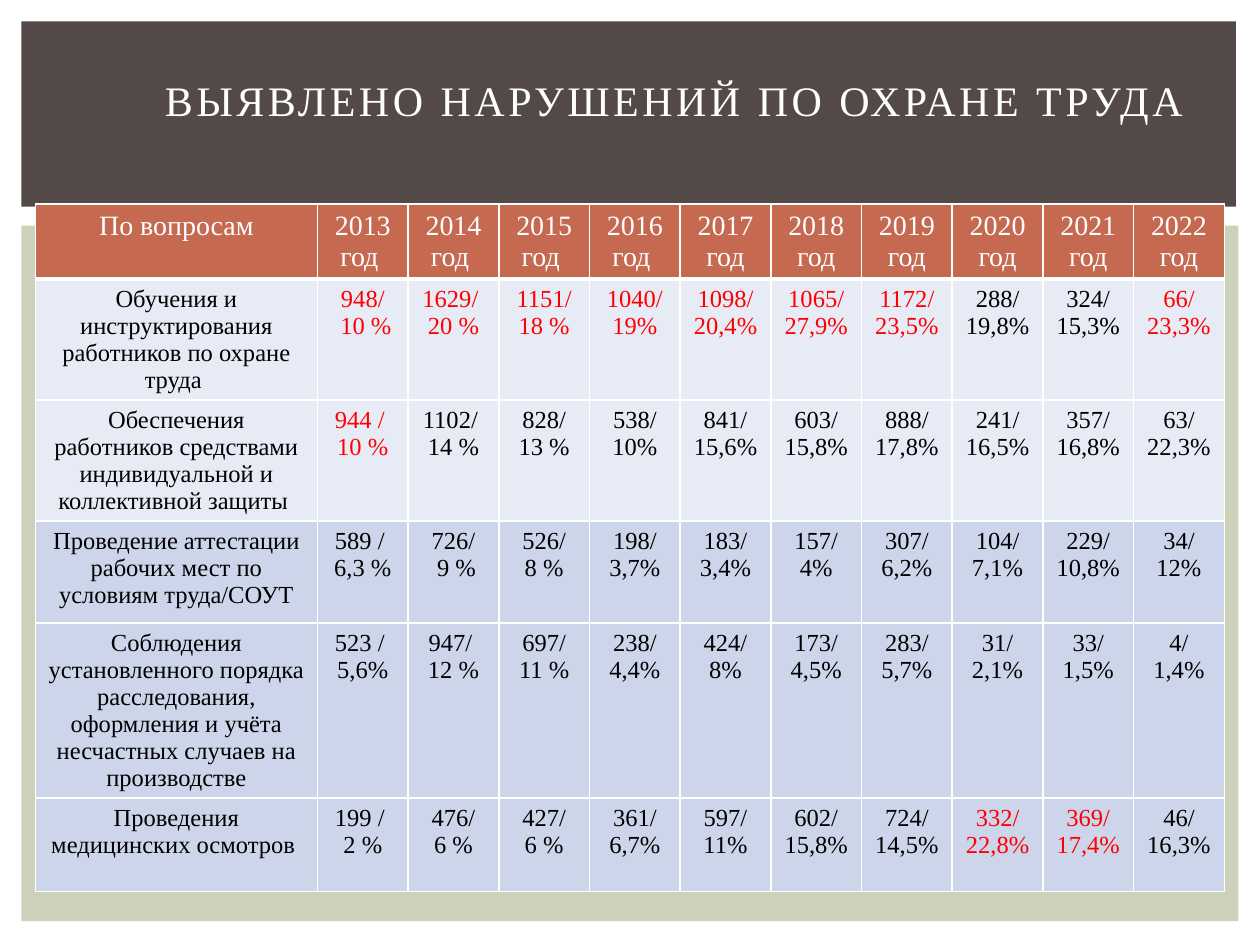
from lxml import etree
from pptx import Presentation
from pptx import util as u
from pptx.dml import color
from pptx.enum import shapes, text
from pptx.oxml import ns

COLORS = {
    "band": "534949", "panel": "CCD1B9", "header": "C66951", "white": "FFFFFF",
    "light": "E7EBF5", "blue": "CCD5EA", "black": "000000", "red": "FF0000",
}
FONT = "Times New Roman"
TITLE = "ВЫЯВЛЕНО НАРУШЕНИЙ ПО ОХРАНЕ ТРУДА"
HEADER = (
    ["По вопросам"]
    + [f"{year} год " for year in range(2013, 2017)]
    + [f"{year} год" for year in range(2017, 2020)]
    + [f"{year}\nгод" for year in range(2020, 2023)]
)
ROWS = [
    ["Обучения и инструктирования работников по охране труда ",
     "948/\n 10 %", "1629/ \n20 %", "1151/\n18 %", "1040/\n19%", "1098/\n20,4%",
     "1065/\n27,9%", "1172/\n23,5%", "288/\n19,8%", "324/\n15,3%", "66/\n23,3%"],
    ["Обеспечения работников средствами индивидуальной и коллективной защиты ",
     "944 / \n10 %", "1102/ \n14 %", "828/\n13 %", "538/\n10%", "841/\n15,6%",
     "603/\n15,8%", "888/\n17,8%", "241/\n16,5%", "357/\n16,8%", "63/\n22,3%"],
    ["Проведение аттестации рабочих мест по условиям труда/СОУТ",
     "589 / \n6,3 %", "726/\n 9 %", "526/\n8 %", "198/\n3,7%", "183/\n3,4%",
     "157/\n4%", "307/\n6,2%", "104/\n7,1%", "229/\n10,8%", "34/\n12%"],
    ["Соблюдения установленного порядка расследования, оформления и учёта "
     "несчастных случаев на производстве",
     "523 / \n5,6%", "947/ \n12 %", "697/\n11 %", "238/\n4,4%", "424/\n8%",
     "173/\n4,5%", "283/\n5,7%", "31/\n2,1%", "33/\n1,5%", "4/\n1,4%"],
    ["Проведения медицинских осмотров ",
     "199 / \n2 %", "476/\n6 %", "427/\n6 %", "361/\n6,7%", "597/\n11%",
     "602/\n15,8%", "724/\n14,5%", "332/\n22,8%", "369/\n17,4%", "46/\n16,3%"],
]
ROW_FILLS = ["header", "light", "light", "blue", "blue", "blue"]
ROW_HEIGHTS = [0.58, 0.96, 0.96, 0.81, 1.39, 0.74]
LABEL_WIDTH, YEAR_WIDTH = 2.24, 0.72
RED_COLUMNS = {1: {1, 2, 3, 4, 5, 6, 7, 10}, 2: {1}, 5: {8, 9}}


def rgb(name):
    return color.RGBColor.from_string(COLORS[name])


def inches(box):
    return [u.Inches(length) for length in box]


def format_span(span, size, shade):
    for name, value in {"name": FONT, "size": u.Pt(size), "bold": False}.items():
        setattr(span.font, name, value)
    span.font.color.rgb = rgb(shade)


def add_band(page, box, shade):
    band = page.shapes.add_shape(shapes.MSO_SHAPE.RECTANGLE, *inches(box))
    band.shadow.inherit = False
    band.fill.solid()
    band.fill.fore_color.rgb = rgb(shade)
    band.line.fill.background()
    page.shapes.title.element.addprevious(band.element)


def place_title(page, box):
    title = page.shapes.title
    for name, value in zip(("left", "top", "width", "height"), inches(box)):
        setattr(title, name, value)
    frame = title.text_frame
    layout = {
        "word_wrap": True, "auto_size": text.MSO_AUTO_SIZE.NONE,
        "vertical_anchor": text.MSO_ANCHOR.MIDDLE, "margin_left": u.Inches(1.2),
    }
    for name, value in layout.items():
        setattr(frame, name, value)
    para = frame.paragraphs[0]
    para.alignment = text.PP_ALIGN.CENTER
    span = para.add_run()
    span.text = TITLE
    format_span(span, 24, "white")
    span.font._element.set("spc", "200")


def add_borders(cell, widths):
    properties = cell._tc.get_or_add_tcPr()
    for side, width in widths.items():
        line = etree.SubElement(properties, ns.qn(f"a:ln{side}"), w=str(u.Pt(width)))
        fill = etree.SubElement(line, ns.qn("a:solidFill"))
        etree.SubElement(fill, ns.qn("a:srgbClr"), val=COLORS["white"])


def fill_cell(cell, words, size, shade, background, borders):
    add_borders(cell, borders)
    cell.fill.solid()
    cell.fill.fore_color.rgb = rgb(background)
    cell.text = words
    for para in cell.text_frame.paragraphs:
        para.alignment = text.PP_ALIGN.CENTER
        for span in para.runs:
            format_span(span, size, shade)


def add_violations_table(page, box):
    rows = [HEADER] + ROWS
    table = page.shapes.add_table(len(rows), len(HEADER), *inches(box)).table
    table.first_row = table.horz_banding = False
    for index, column in enumerate(table.columns):
        column.width = u.Inches(YEAR_WIDTH if index else LABEL_WIDTH)
    for r, values in enumerate(rows):
        table.rows[r].height = u.Inches(ROW_HEIGHTS[r])
        size = 14 if r else 16
        base = "black" if r else "white"
        borders = {"L": 1, "R": 1, "T": 3 if r == 1 else 1, "B": 3 if r == 0 else 1}
        for c, words in enumerate(values):
            shade = "red" if c in RED_COLUMNS.get(r, ()) else base
            fill_cell(table.cell(r, c), words, size, shade, ROW_FILLS[r], borders)


def main():
    deck = Presentation()
    deck.slide_width, deck.slide_height = u.Inches(10), u.Inches(7.5)
    page = deck.slides.add_slide(deck.slide_layouts[5])
    add_band(page, (0.17, 1.79, 9.66, 5.52), "panel")
    add_band(page, (0.17, 0.17, 9.64, 1.47), "band")
    place_title(page, (-0.12, 0.36, 9.84, 0.87))
    add_violations_table(page, (0.28, 1.62, 9.44, sum(ROW_HEIGHTS)))
    deck.save("out.pptx")


if __name__ == "__main__":
    main()
